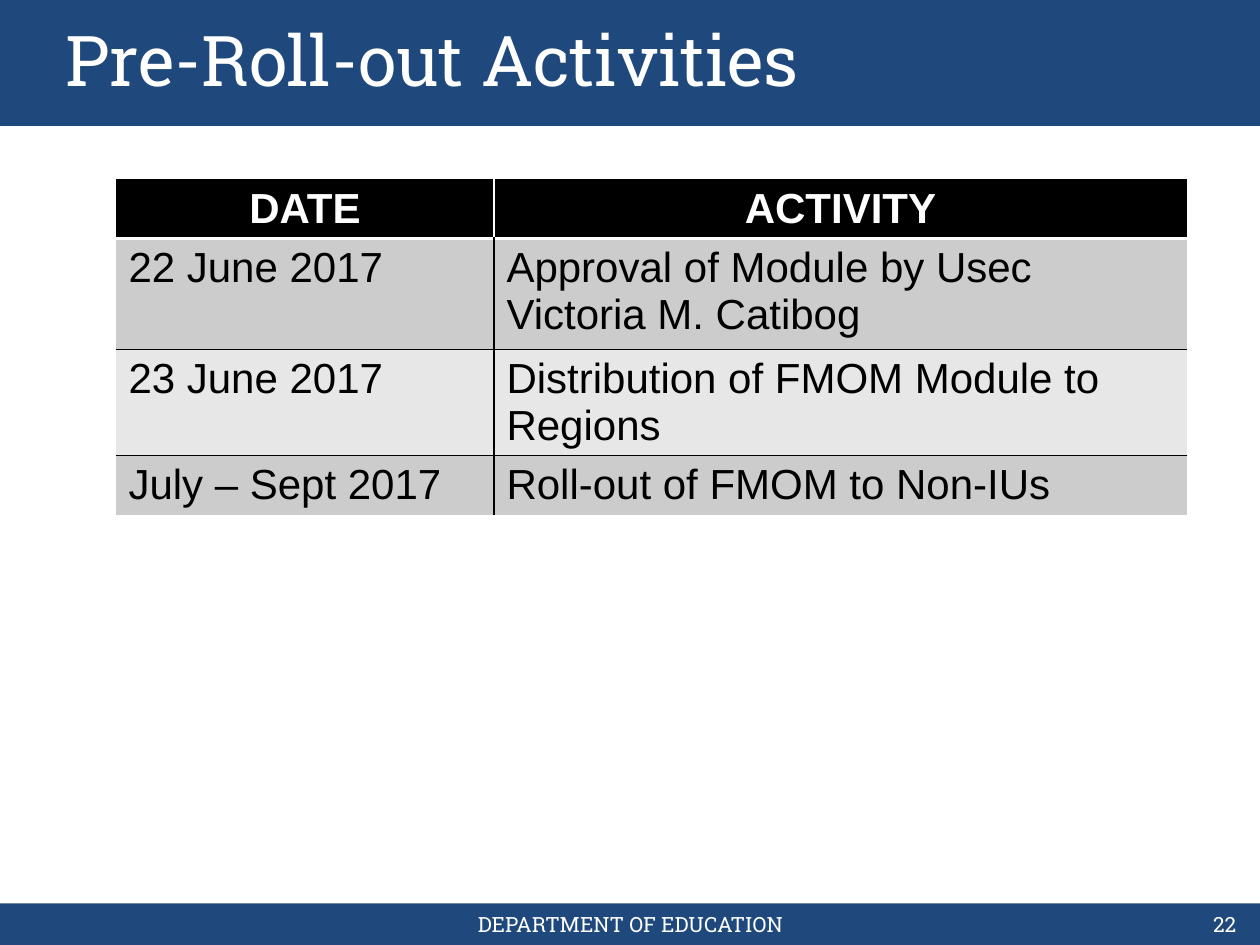
"""Build the Pre-Roll-out Activities slide with its schedule table."""
from lxml import etree
from pptx import Presentation
from pptx.dml.color import RGBColor
from pptx.enum.shapes import MSO_SHAPE
from pptx.enum.text import MSO_ANCHOR, PP_ALIGN
from pptx.oxml.ns import qn
from pptx.util import Inches, Pt

RECT = MSO_SHAPE.RECTANGLE
TOP, MIDDLE = MSO_ANCHOR.TOP, MSO_ANCHOR.MIDDLE
LEFT, CENTER, RIGHT = PP_ALIGN.LEFT, PP_ALIGN.CENTER, PP_ALIGN.RIGHT
TITLE_ONLY = 5

TITLE = "Pre-Roll-out Activities"
FOOTER = "DEPARTMENT OF EDUCATION"
PAGE = "22"
SCHEDULE = [
    ("DATE", "ACTIVITY"),
    ("22 June 2017", "Approval of Module by Usec Victoria M. Catibog"),
    ("23 June 2017", "Distribution of FMOM Module to Regions"),
    ("July – Sept 2017", "Roll-out of FMOM to Non-IUs"),
]
COL_WIDTHS = [3, 5.5]
ROW_HEIGHTS = [0.41, 0.88, 0.41, 0.41]

THEME = {
    "bar": "1F497D", "white": "FFFFFF", "black": "000000",
    "bands": ["E7E7E7", "CCCCCC"],
    "head_font": "Roboto Slab", "body_font": "Arial",
    "title_size": 40, "table_size": 24, "footer_size": 12,
}
SLIDE_W, SLIDE_H = 10, 7.5
HEADER_H, FOOTER_H = 1, 0.33
FOOTER_Y = SLIDE_H - FOOTER_H


def write(tf, text, font=THEME["head_font"], size=THEME["footer_size"],
          color=THEME["white"], bold=False, align=LEFT):
    p = tf.paragraphs[0]
    p.alignment = align
    r = p.add_run()
    r.text = text
    r.font.name, r.font.size, r.font.bold = font, Pt(size), bold
    r.font.color.rgb = RGBColor.from_string(color)


def add_bar(s, y, h):
    sp = s.shapes.add_shape(RECT, 0, Inches(y), Inches(SLIDE_W), Inches(h))
    sp.shadow.inherit = False
    sp.fill.solid()
    sp.fill.fore_color.rgb = RGBColor.from_string(THEME["bar"])
    sp.line.fill.background()


def add_footer_text(s, text, x, w, align):
    sp = s.shapes.add_textbox(Inches(x), Inches(FOOTER_Y), Inches(w), Inches(FOOTER_H))
    tf = sp.text_frame
    tf.word_wrap = True
    tf.vertical_anchor = MIDDLE
    write(tf, text, align=align)


def add_title(s):
    sp = s.shapes.title
    sp.left, sp.top, sp.width, sp.height = map(Inches, (0.42, 0.08, 9, 1.25))
    sp.text_frame.vertical_anchor = TOP
    write(sp.text_frame, TITLE, size=THEME["title_size"])
    s.shapes.element.append(sp.element)


def set_border(cell, side, color, width):
    ln = etree.SubElement(cell._tc.get_or_add_tcPr(), qn(f"a:ln{side}"), w=str(Pt(width)))
    if color:
        fill = etree.SubElement(ln, qn("a:solidFill"))
        etree.SubElement(fill, qn("a:srgbClr"), val=color)
    else:
        etree.SubElement(ln, qn("a:noFill"))


def format_cell(cell, row, col):
    white, black = THEME["white"], THEME["black"]
    header = row == 0
    ink = white if header else black
    last_row, last_col = row == len(SCHEDULE) - 1, col == len(COL_WIDTHS) - 1
    set_border(cell, "L", ink if col else None, 1)
    set_border(cell, "R", None if last_col else ink, 1)
    set_border(cell, "T", None if header else white if row == 1 else black, 2 if row == 1 else 1)
    set_border(cell, "B", None if last_row else ink, 2 if header else 1)
    cell.fill.solid()
    cell.fill.fore_color.rgb = RGBColor.from_string(black if header else THEME["bands"][row % 2])
    write(cell.text_frame, SCHEDULE[row][col], font=THEME["body_font"],
          size=THEME["table_size"], color=ink, bold=header,
          align=CENTER if header else LEFT)


def add_schedule(s):
    table = s.shapes.add_table(
        len(SCHEDULE), len(COL_WIDTHS), Inches(0.92), Inches(1.42),
        Inches(sum(COL_WIDTHS)), Inches(sum(ROW_HEIGHTS))).table
    for column, w in zip(table.columns, COL_WIDTHS):
        column.width = Inches(w)
    for i, h in enumerate(ROW_HEIGHTS):
        table.rows[i].height = Inches(h)
        for j in range(len(COL_WIDTHS)):
            format_cell(table.cell(i, j), i, j)


def main():
    prs = Presentation()
    prs.slide_width, prs.slide_height = Inches(SLIDE_W), Inches(SLIDE_H)
    s = prs.slides.add_slide(prs.slide_layouts[TITLE_ONLY])
    add_bar(s, FOOTER_Y, FOOTER_H)
    add_bar(s, 0, HEADER_H)
    add_footer_text(s, FOOTER, 3.42, 3.17, CENTER)
    add_footer_text(s, PAGE, 7.58, 2.33, RIGHT)
    add_title(s)
    add_schedule(s)
    prs.save("out.pptx")


if __name__ == "__main__":
    main()
